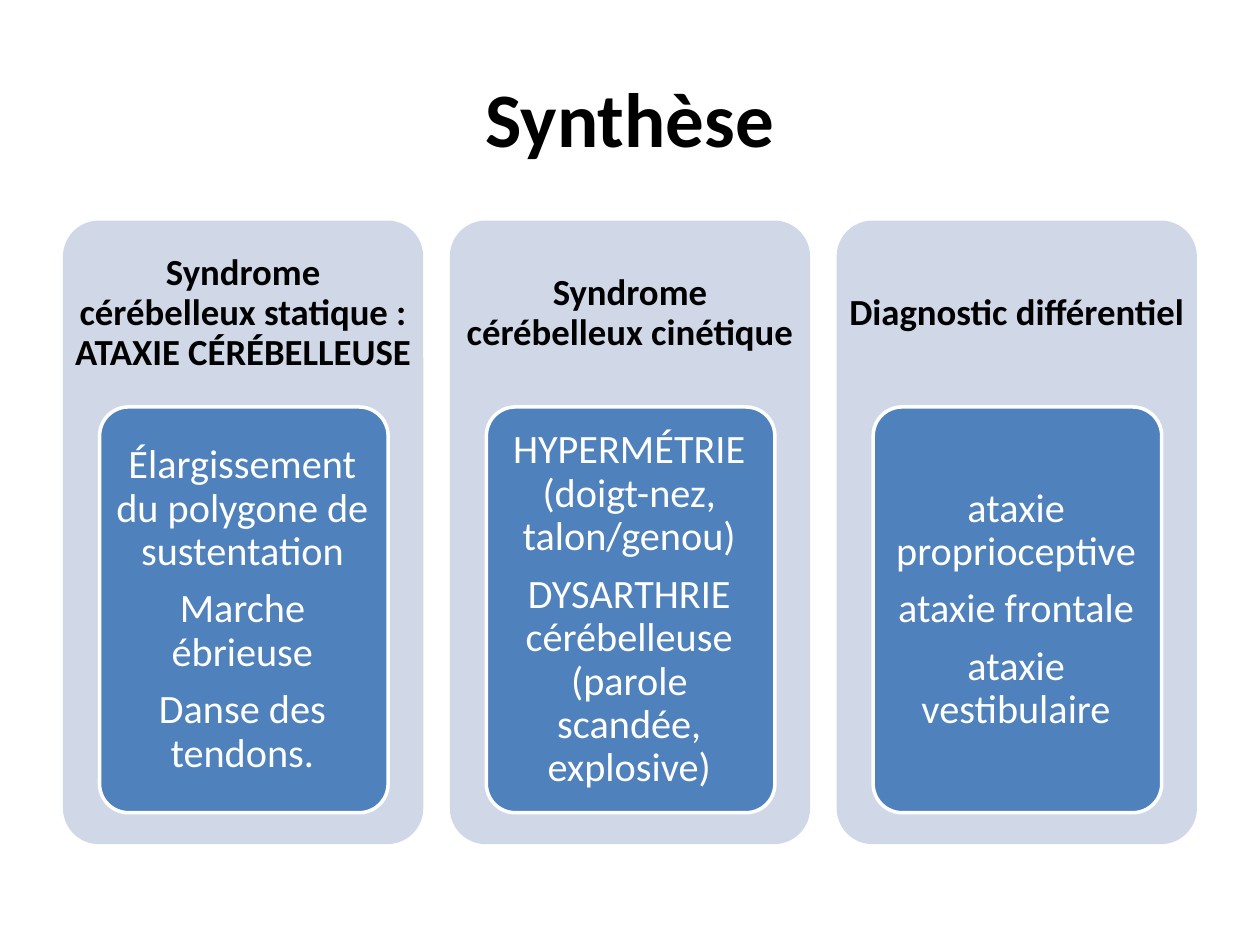
from pptx import Presentation
from pptx.dml.color import RGBColor
from pptx.enum.shapes import MSO_SHAPE
from pptx.enum.text import MSO_ANCHOR, PP_ALIGN
from pptx.util import Inches, Pt

COLORS = {"panel": "D0D8E8", "card": "4F81BD", "white": "FFFFFF", "black": "000000"}

COLUMNS = [
    ("Syndrome cérébelleux statique : ATAXIE CÉRÉBELLEUSE",
     ["Élargissement du polygone de sustentation", "Marche ébrieuse", "Danse des tendons."]),
    ("Syndrome cérébelleux cinétique",
     ["HYPERMÉTRIE (doigt-nez, talon/genou)",
      "DYSARTHRIE cérébelleuse (parole scandée, explosive)"]),
    ("Diagnostic différentiel",
     ["ataxie proprioceptive", "ataxie frontale", "ataxie vestibulaire"]),
]


def add_rounded(left, top, width, height, color):
    box = page.shapes.add_shape(MSO_SHAPE.ROUNDED_RECTANGLE, Inches(left), Inches(top),
                                Inches(width), Inches(height))
    box.adjustments[0] = 0.1
    box.shadow.inherit = False
    box.fill.solid()
    box.fill.fore_color.rgb = RGBColor.from_string(COLORS[color])
    box.line.fill.background()
    return box


def add_text(left, top, width, height, lines, size, color, bold=False,
             margins=(0.1, 0.05), line_spacing=0.9):
    box = page.shapes.add_textbox(Inches(left), Inches(top), Inches(width), Inches(height))
    frame = box.text_frame
    frame.word_wrap = True
    frame.vertical_anchor = MSO_ANCHOR.MIDDLE
    frame.margin_left = frame.margin_right = Inches(margins[0])
    frame.margin_top = frame.margin_bottom = Inches(margins[1])
    frame.text = "\n".join(lines)
    for para in frame.paragraphs:
        para.alignment = PP_ALIGN.CENTER
        para.line_spacing = line_spacing
        if len(lines) > 1:
            para.space_after = Pt(8)
        for span in para.runs:
            span.font.name = "Calibri"
            span.font.size = Pt(size)
            span.font.bold = bold
            span.font.color.rgb = RGBColor.from_string(COLORS[color])


deck = Presentation()
deck.slide_width = Inches(10)
deck.slide_height = Inches(7.5)
page = deck.slides.add_slide(deck.slide_layouts[6])

# Title
add_text(0.5, 0.3, 9, 1.25, ["Synthèse"], 44, "black", bold=True, line_spacing=1.0)

# Three equal columns: panel, heading, inner card and its items
for index, (heading, items) in enumerate(COLUMNS):
    left = 0.5 + index * 3.07
    add_rounded(left, 1.75, 2.86, 4.95, "panel")
    add_text(left, 1.75, 2.86, 1.48, [heading], 21, "black", bold=True, margins=(0.09, 0.09))
    card = add_rounded(left + 0.29, 3.23, 2.29, 3.22, "card")
    card.line.color.rgb = RGBColor.from_string(COLORS["white"])
    card.line.width = Pt(2)
    add_text(left + 0.35, 3.3, 2.15, 3.08, items, 23, "white", margins=(0.06, 0.05))

deck.save("out.pptx")
